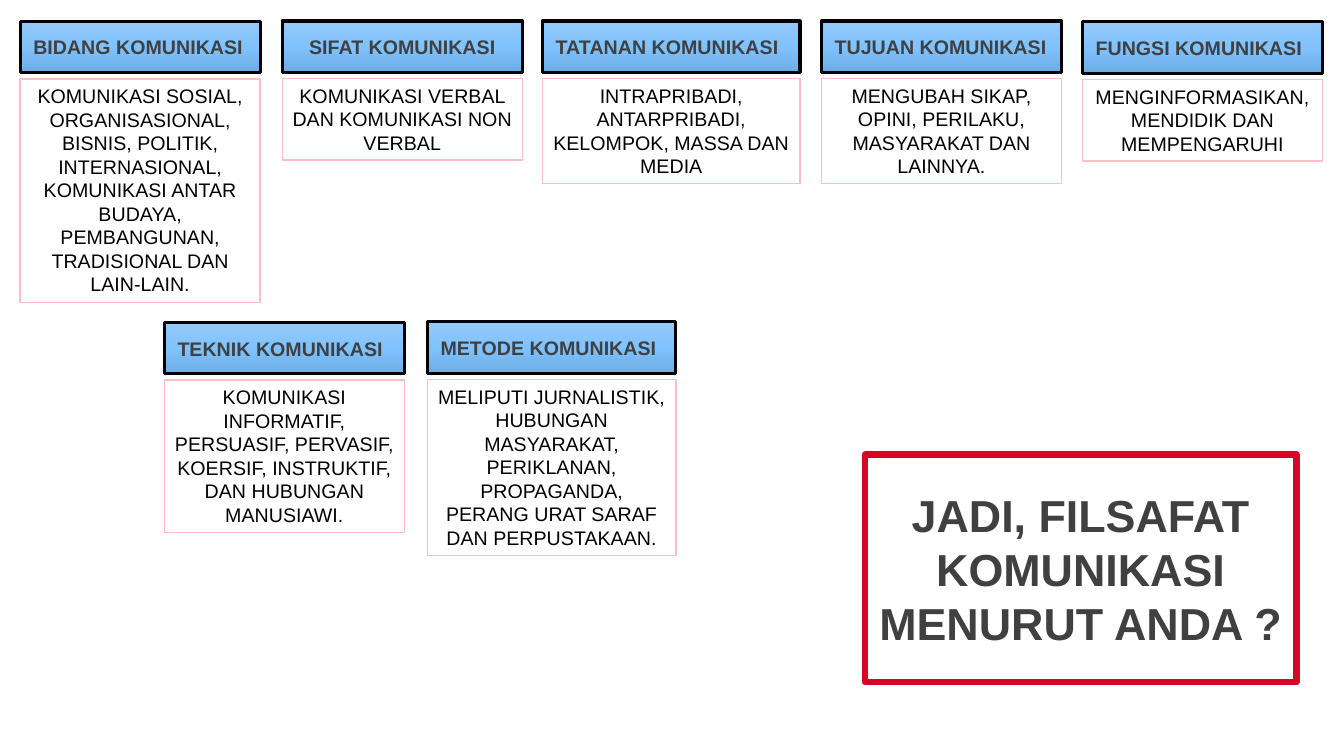
from copy import deepcopy

from pptx import Presentation
from pptx.dml.color import RGBColor
from pptx.enum.shapes import MSO_SHAPE
from pptx.enum.text import MSO_ANCHOR, MSO_AUTO_SIZE, PP_ALIGN
from pptx.oxml.ns import qn
from pptx.util import Pt

COLORS = {
    "white": "FFFFFF",
    "black": "000000",
    "heading": "404040",
    "pink": "FDBDC7",
    "red": "D70627",
}
HEADING_GRADIENT = [(0, "95CAFA"), (0.5, "7FC2FE"), (1, "6EADE5")]
HEADING_HEIGHT = 36.7
DETAIL_OFFSET = 41.2
LINE_HEIGHT = 16.92
DETAIL_PADDING = 7.4

TOPICS = [
    (14.4, 15.2, 171.5, 9, "BIDANG KOMUNIKASI",
     "KOMUNIKASI SOSIAL, ORGANISASIONAL, BISNIS, POLITIK, INTERNASIONAL, "
     "KOMUNIKASI ANTAR BUDAYA, PEMBANGUNAN, TRADISIONAL DAN LAIN-LAIN."),
    (201.6, 15, 171.5, 3, "SIFAT KOMUNIKASI",
     "KOMUNIKASI VERBAL DAN KOMUNIKASI NON VERBAL"),
    (387.5, 15, 184, 4, "TATANAN KOMUNIKASI",
     "INTRAPRIBADI, ANTARPRIBADI, KELOMPOK, MASSA DAN MEDIA"),
    (586.8, 15, 171.5, 4, "TUJUAN KOMUNIKASI",
     "MENGUBAH SIKAP, OPINI, PERILAKU, MASYARAKAT DAN LAINNYA."),
    (773.2, 15.6, 171.5, 3, "FUNGSI KOMUNIKASI",
     "MENGINFORMASIKAN, MENDIDIK DAN MEMPENGARUHI"),
    (117.4, 230.4, 171.5, 6, "TEKNIK KOMUNIKASI",
     "KOMUNIKASI INFORMATIF, PERSUASIF, PERVASIF, KOERSIF, INSTRUKTIF, "
     "DAN HUBUNGAN MANUSIAWI."),
    (305.3, 229.9, 177.5, 7, "METODE KOMUNIKASI",
     "MELIPUTI JURNALISTIK, HUBUNGAN MASYARAKAT, PERIKLANAN, PROPAGANDA, "
     "PERANG URAT SARAF DAN PERPUSTAKAAN."),
]


def write_text(shape, text, size=14, color="black", bold=False, font="Arial",
               align=PP_ALIGN.CENTER, anchor=MSO_ANCHOR.TOP, margins=(7.2, 3.6)):
    frame = shape.text_frame
    frame.word_wrap = True
    frame.vertical_anchor = anchor
    frame.margin_left = frame.margin_right = Pt(margins[0])
    frame.margin_top = frame.margin_bottom = Pt(margins[1])
    paragraph = frame.paragraphs[0]
    paragraph.alignment = align
    run = paragraph.add_run()
    run.text = text
    run.font.name = font
    run.font.size = Pt(size)
    run.font.bold = bold
    run.font.color.rgb = RGBColor.from_string(COLORS[color])


class SlideBuilder:
    def __init__(self, slide):
        self.slide = slide
        self.title_style = {"color": "heading", "bold": True,
                            "anchor": MSO_ANCHOR.MIDDLE, "margins": (9.4, 5)}

    def box(self, left, top, width, height, line_color, line_width):
        shape = self.slide.shapes.add_shape(
            MSO_SHAPE.RECTANGLE, Pt(left), Pt(top), Pt(width), Pt(height))
        shape.shadow.inherit = False
        shape.fill.solid()
        shape.fill.fore_color.rgb = RGBColor.from_string(COLORS["white"])
        shape.line.color.rgb = RGBColor.from_string(COLORS[line_color])
        shape.line.width = Pt(line_width)
        return shape

    def heading(self, left, top, width, text, align):
        shape = self.box(left, top, width, HEADING_HEIGHT, "black", 2.25)
        shape.fill.gradient()
        shape.fill.gradient_angle = 270
        stop_list = shape._element.spPr.find(qn("a:gradFill")).find(qn("a:gsLst"))
        stop_list.insert(1, deepcopy(stop_list[0]))
        for stop, (position, color) in zip(shape.fill.gradient_stops, HEADING_GRADIENT):
            stop.position = position
            stop.color.rgb = RGBColor.from_string(color)
        write_text(shape, text, align=align, **self.title_style)

    def detail(self, left, top, width, line_count, text):
        height = line_count * LINE_HEIGHT + DETAIL_PADDING
        shape = self.box(left, top, width, height, "pink", 1)
        write_text(shape, text)
        shape.text_frame.auto_size = MSO_AUTO_SIZE.SHAPE_TO_FIT_TEXT

    def topic(self, left, top, width, line_count, title, text):
        centered = title.startswith("SIFAT")
        align = PP_ALIGN.CENTER if centered else PP_ALIGN.JUSTIFY
        self.heading(left, top, width, title, align)
        self.detail(left, top + DETAIL_OFFSET, width, line_count, text)

    def question(self, left, top, width, height, text):
        shape = self.box(left, top, width, height, "red", 4.5)
        write_text(shape, text, size=32, **self.title_style)


def main():
    presentation = Presentation()
    presentation.slide_width = Pt(960)
    presentation.slide_height = Pt(540)
    slide = presentation.slides.add_slide(presentation.slide_layouts[6])
    builder = SlideBuilder(slide)
    for topic in TOPICS:
        builder.topic(*topic)
    builder.question(617.8, 324.7, 308.2, 162.7,
                     "JADI, FILSAFAT KOMUNIKASI MENURUT ANDA ?")
    presentation.save("out.pptx")


if __name__ == "__main__":
    main()
